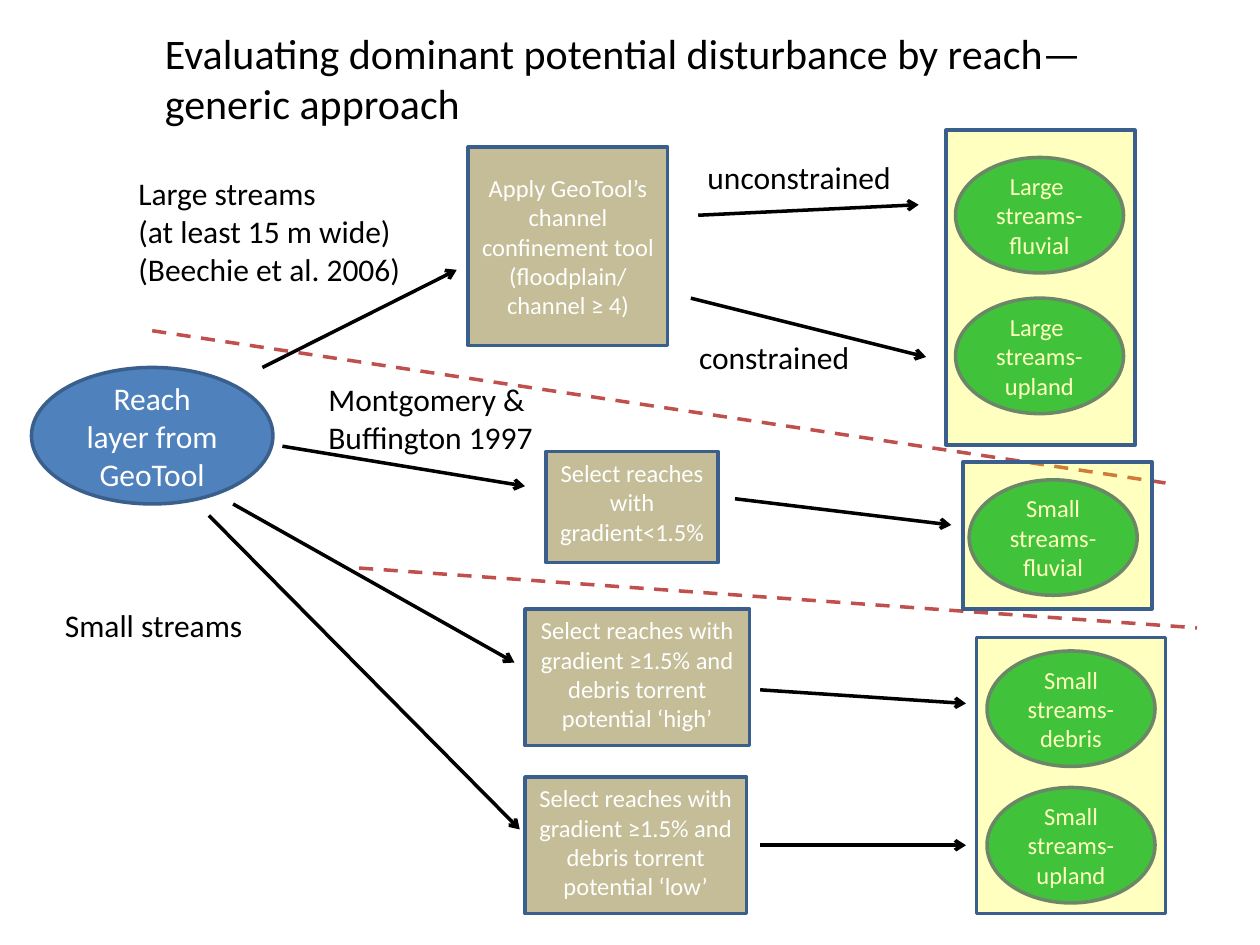
from lxml import etree
from pptx import Presentation
from pptx.dml.color import RGBColor
from pptx.enum.dml import MSO_LINE
from pptx.enum.shapes import MSO_CONNECTOR, MSO_SHAPE
from pptx.enum.text import MSO_ANCHOR, MSO_AUTO_SIZE, PP_ALIGN
from pptx.oxml.ns import qn
from pptx.util import Inches, Pt

RECT, OVAL = MSO_SHAPE.RECTANGLE, MSO_SHAPE.OVAL
STRAIGHT, DASH = MSO_CONNECTOR.STRAIGHT, MSO_LINE.DASH
TOP, MIDDLE = MSO_ANCHOR.TOP, MSO_ANCHOR.MIDDLE
LEFT, CENTER = PP_ALIGN.LEFT, PP_ALIGN.CENTER
NO_FIT, GROW = MSO_AUTO_SIZE.NONE, MSO_AUTO_SIZE.SHAPE_TO_FIT_TEXT

FONT = "Calibri"
BLACK, WHITE, OUTLINE = "000000", "FFFFFF", "3A5F8C"
BLUE, TAN, GREEN, YELLOW, RED = "4F81BD", "C4BD97", "00B050", "FFFF00", "C0504D"

# The slide is a grid of 120 columns by 90 rows
SLIDE_W, SLIDE_H = Inches(10), Inches(7.5)
COL, ROW = SLIDE_W / 120, SLIDE_H / 90
CLASS_W, CLASS_H = 16, 11


def place(box):
    left, top, width, height = box
    return round(left * COL), round(top * ROW), round(width * COL), round(height * ROW)


def color(hex_code):
    return RGBColor.from_string(hex_code)


def write(frame, text, size, ink, align=LEFT, anchor=TOP, wrap=True, fit=NO_FIT):
    frame.text = text
    frame.word_wrap = wrap
    frame.auto_size = fit
    frame.vertical_anchor = anchor
    for paragraph in frame.paragraphs:
        paragraph.alignment = align
        for run in paragraph.runs:
            run.font.name, run.font.size = FONT, Pt(size)
            run.font.color.rgb = color(ink)


def add_node(slide, kind, box, fill, text="", size=14, anchor=MIDDLE):
    node = slide.shapes.add_shape(kind, *place(box))
    node.shadow.inherit = False
    node.fill.solid()
    node.fill.fore_color.rgb = color(fill)
    node.line.color.rgb = color(OUTLINE)
    node.line.width = Pt(2)
    if text:
        write(node.text_frame, text, size, WHITE, CENTER, anchor)
    return node


def add_label(slide, box, text, wrap=False):
    label = slide.shapes.add_textbox(*place(box))
    write(label.text_frame, text, 18, BLACK, wrap=wrap, fit=GROW)


def add_line(slide, x1, y1, x2, y2, ink):
    line = slide.shapes.add_connector(
        STRAIGHT, round(x1 * COL), round(y1 * ROW), round(x2 * COL), round(y2 * ROW))
    line.line.color.rgb = color(ink)
    line.line.width = Pt(2)
    etree.SubElement(line._element.spPr, qn("a:effectLst"))
    return line


def add_arrow(slide, *ends):
    arrow = add_line(slide, *ends, BLACK)
    etree.SubElement(arrow.line._get_or_add_ln(), qn("a:tailEnd"), type="arrow")


def add_divider(slide, *ends):
    add_line(slide, *ends, RED).line.dash_style = DASH


def add_class_group(slide, box, inset, classes):
    """Stream classes, each at a row offset in the box, under a sheer panel."""
    left, top = box[:2]
    for offset, text in classes:
        add_node(slide, OVAL, (left + inset, top + offset, CLASS_W, CLASS_H), GREEN, text)
    panel = add_node(slide, RECT, box, YELLOW)
    tint = panel.fill._xPr.find(qn("a:solidFill"))[0]
    etree.SubElement(tint, qn("a:alpha"), val="25000")


def add_title(slide, box):
    title = slide.shapes.title
    title.left, title.top, title.width, title.height = place(box)
    write(title.text_frame,
          "Evaluating dominant potential disturbance by reach—generic approach", 24, BLACK)


def add_steps(slide):
    add_node(slide, OVAL, (3, 35, 23, 13), BLUE, "Reach layer from GeoTool", 18)
    add_node(slide, RECT, (44.6, 14, 19, 18.9), TAN,
             "Apply GeoTool’s channel confinement tool (floodplain/\nchannel ≥ 4)")
    add_node(slide, RECT, (52, 43, 16.4, 10.6), TAN,
             "Select reaches with gradient<1.5%", anchor=TOP)
    for top, width, level in ((58, 21.4, "high"), (74, 21.1, "low")):
        add_node(slide, RECT, (50, top, width, 13), TAN,
                 "Select reaches with gradient ≥1.5% and debris torrent "
                 f"potential ‘{level}’", anchor=TOP)


def add_flow(slide):
    # From the reach layer to the steps
    add_arrow(slide, 25, 35, 43.5, 25.7)
    add_arrow(slide, 26.9, 42.5, 50, 46.3)
    add_arrow(slide, 22.2, 48, 49, 63.1)
    add_arrow(slide, 19.9, 49.1, 49.5, 79)
    # From the steps to the stream classes
    add_arrow(slide, 66.5, 20.5, 87.5, 19.5)
    add_arrow(slide, 65.8, 28.4, 88.2, 34)
    add_arrow(slide, 70, 47.5, 90.6, 50)
    add_arrow(slide, 72.4, 65.7, 92, 67)
    add_arrow(slide, 72.4, 80.5, 92, 80.5)
    # Between stream sizes and gradients
    add_divider(slide, 14.5, 31.5, 111, 46)
    add_divider(slide, 34.2, 54.1, 114, 59.8)


def add_classes(slide):
    add_class_group(slide, (90.1, 12.4, 18, 30), 0.9,
                    ((2.6, "Large \nstreams- fluvial"), (16, "Large \nstreams- upland")))
    add_class_group(slide, (91.7, 44, 18, 14), 0.6, ((1.7, "Small\nstreams-\nfluvial"),))
    add_class_group(slide, (93, 60.7, 18, 26.3), 1,
                    ((1.3, "Small\nstreams-\ndebris"), (14.3, "Small\nstreams-\nupland")))


def add_labels(slide):
    add_label(slide, (12, 16, 27.7, 15.7),
              "Large streams\n(at least 15 m wide)\n(Beechie et al. 2006)")
    add_label(slide, (66.2, 14.5, 20, 4.8), "unconstrained")
    add_label(slide, (65.4, 31.6, 16.9, 4.8), "constrained")
    add_label(slide, (5, 57.1, 19.4, 4.8), "Small streams")
    add_label(slide, (30.1, 35.6, 23.5, 8.5), "Montgomery & Buffington 1997", wrap=True)


def main():
    deck = Presentation()
    deck.slide_width, deck.slide_height = SLIDE_W, SLIDE_H
    slide = deck.slides.add_slide(deck.slide_layouts[5])
    add_title(slide, (14.5, 2, 91.5, 11))
    add_steps(slide)
    add_flow(slide)
    add_classes(slide)
    add_labels(slide)
    deck.save("out.pptx")


if __name__ == "__main__":
    main()
